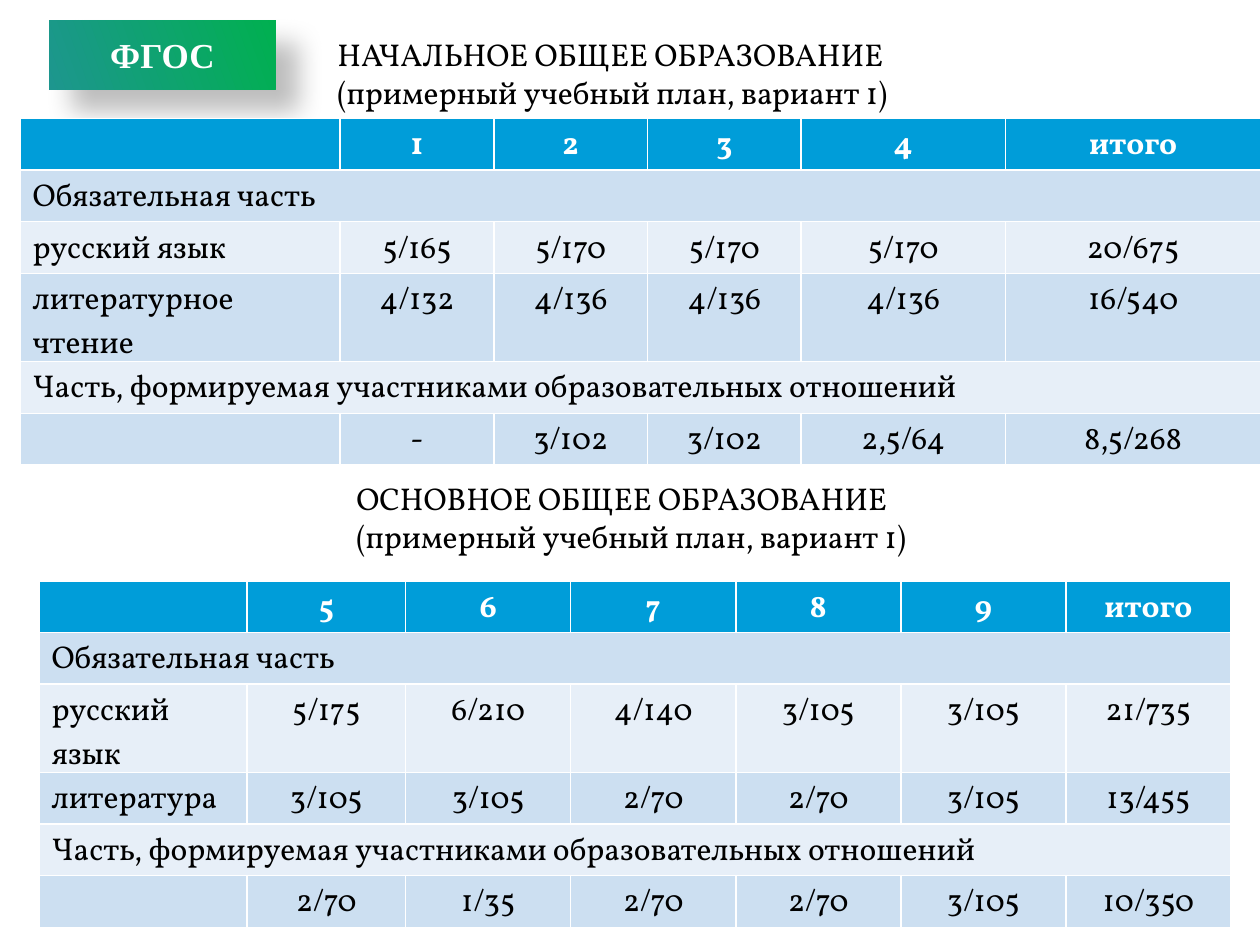
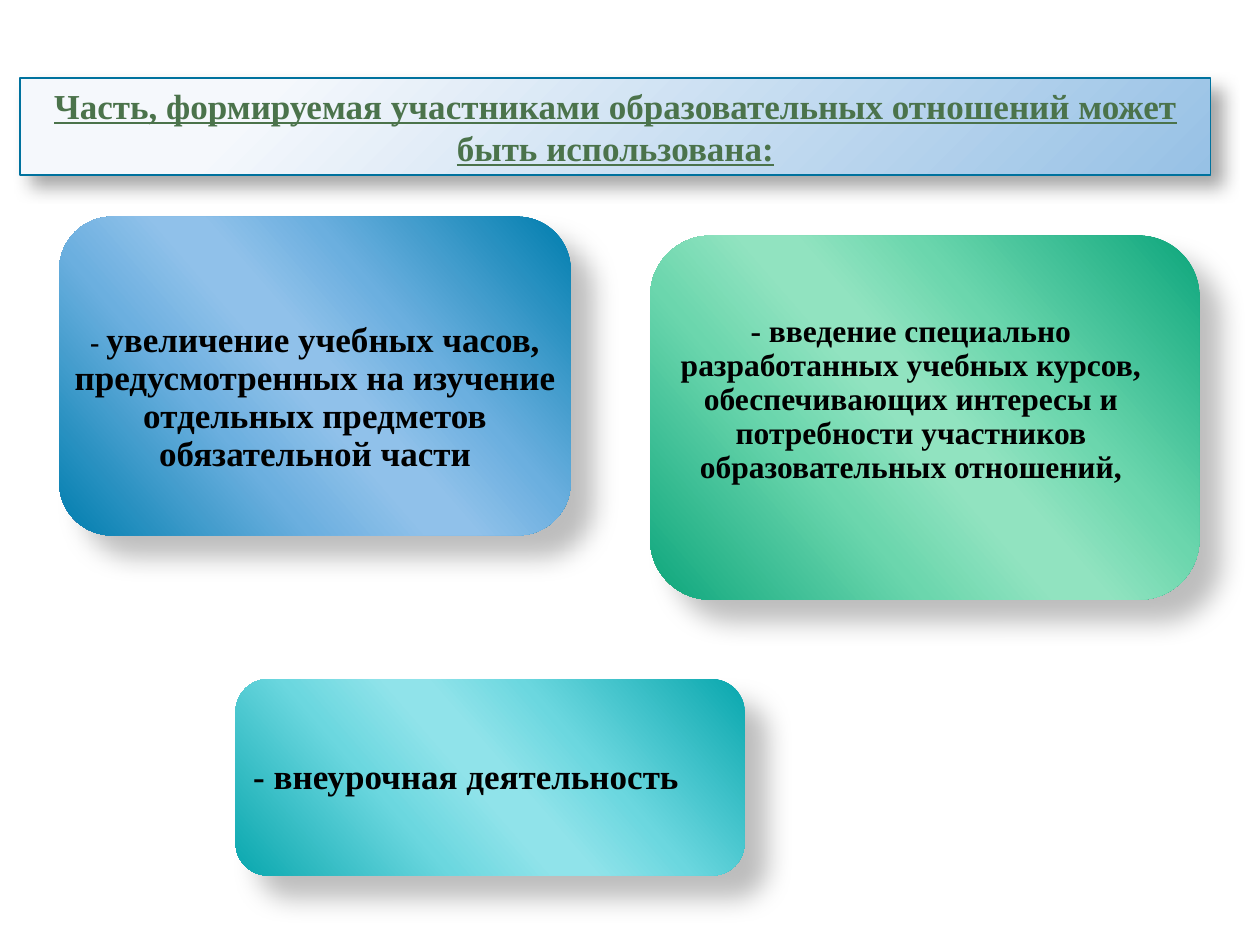
import lxml.etree
import pptx
import pptx.dml.color
import pptx.enum.shapes
import pptx.enum.text
import pptx.oxml.ns
import pptx.util
from pptx.util import Inches

# Content: study plans
MANDATORY = "Обязательная часть"
OPTIONAL = "Часть, формируемая участниками образовательных отношений"
VARIANT = "(примерный учебный план, вариант 1)"
BADGE = "ФГОС"

# A row with a single entry spans the whole table
PLANS = [
    {
        "title": ["ОСНОВНОЕ ОБЩЕЕ ОБРАЗОВАНИЕ", VARIANT],
        "title_at": (2.73, 3.75, 4.85, 0.71),
        "table_at": (0.31, 4.61),
        "cols": [1.65, 1.26] + [1.31] * 5,
        "rows": [
            ["", "5", "6", "7", "8", "9", "итого"],
            [MANDATORY],
            ["русский язык", "5/175", "6/210", "4/140", "3/105", "3/105", "21/735"],
            ["литература", "3/105", "3/105", "2/70", "2/70", "3/105", "13/455"],
            [OPTIONAL],
            ["", "2/70", "1/35", "2/70", "2/70", "3/105", "10/350"],
        ],
    },
    {
        "title": ["НАЧАЛЬНОЕ ОБЩЕЕ ОБРАЗОВАНИЕ", VARIANT],
        "title_at": (2.58, 0.23, 4.85, 0.71),
        "table_at": (0.16, 0.94),
        "cols": [2.54] + [1.22] * 3 + [1.62, 2.03],
        "rows": [
            ["", "1", "2", "3", "4", "итого"],
            [MANDATORY],
            ["русский язык", "5/165", "5/170", "5/170", "5/170", "20/675"],
            ["литературное чтение", "4/132", "4/136", "4/136", "4/136", "16/540"],
            [OPTIONAL],
            ["", "-", "3/102", "3/102", "2,5/64", "8,5/268"],
        ],
    },
]

# Content: uses of the optional part
USES_TITLE = OPTIONAL + " может быть использована:"
USES = [
    {
        "runs": [("- ", 16),
                 ("увеличение учебных часов, предусмотренных на изучение "
                  "отдельных предметов обязательной части", 20)],
        "card": (0.47, 1.72, 4.06, 2.53), "text": (0.39, 1.86, 4.22, 2.6),
        "shades": ("007EAE", "6BAFDF", "90C1EA"), "align": "CENTER", "inset": 0.07,
    },
    {
        "runs": [("- введение специально разработанных учебных курсов, "
                  "обеспечивающих интересы и потребности участников "
                  "образовательных отношений,", 18)],
        "card": (5.16, 1.87, 4.36, 2.89), "text": (5.08, 2, 4.3, 2.36),
        "shades": ("0DA67C", "6BD6AD", "91E3C0"), "align": "CENTER", "inset": 0.07,
    },
    {
        "runs": [("- внеурочная деятельность", 20)],
        "card": (1.87, 5.39, 4.04, 1.56), "text": (1.93, 5.47, 4.09, 1.41),
        "shades": ("09A7AE", "6BD7DF", "90E3EA"), "align": "LEFT", "inset": 0.08,
    },
]

# Shared style
COLORS = {
    "text": "000000", "white": "FFFFFF", "header": "009DD9",
    "band_dark": "CCDFF1", "band_light": "E7EFF8",
    "badge_start": "00B050", "badge_end": "1D968E",
    "title_text": "4B734B", "title_line": "00729E",
    "title_start": "F5F8FC", "title_end": "97C1E5",
}
PLAN_FONT, USES_FONT = "Vollkorn", "Times New Roman"
ROW_HEIGHT = 0.41
ALIGN = pptx.enum.text.PP_ALIGN
ANCHOR = pptx.enum.text.MSO_ANCHOR
SHAPE = pptx.enum.shapes.MSO_SHAPE


def rgb(name):
    return pptx.dml.color.RGBColor.from_string(COLORS[name])


def style(p, font, size, color="text", bold=False, align=ALIGN.LEFT):
    p.alignment = align
    p.font.name = font
    p.font.size = pptx.util.Pt(size)
    p.font.bold = bold
    p.font.color.rgb = rgb(color)


def add_xml(parent, markup):
    namespace = pptx.oxml.ns.nsdecls("a")
    parent.append(lxml.etree.fromstring(markup.replace(">", f" {namespace}>", 1),
                                        pptx.oxml.oxml_parser))


def add_panel(s, at, kind, stops, direction, line=None, shadow=(26, 15, 18)):
    """Shape with a gradient fill and a soft shadow to the lower right."""
    sp = s.shapes.add_shape(kind, *map(Inches, at))
    sp_pr = sp.fill._xPr
    stop_xml = "".join(f'<a:gs pos="{pos * 1000}"><a:srgbClr val="{color}"/></a:gs>'
                       for pos, color in stops)
    add_xml(sp_pr, f'<a:gradFill rotWithShape="1"><a:gsLst>{stop_xml}</a:gsLst>'
                   f'{direction}</a:gradFill>')
    if line:
        sp.line.color.rgb = rgb(line)
        sp.line.width = pptx.util.Pt(0.75)
    else:
        sp.line.fill.background()
    alpha, blur, distance = shadow
    add_xml(sp_pr, f'<a:effectLst><a:outerShdw blurRad="{pptx.util.Pt(blur)}" '
                   f'dist="{pptx.util.Pt(distance)}" dir="2700000" algn="tl">'
                   f'<a:srgbClr val="{COLORS["text"]}"><a:alpha val="{alpha * 1000}"/>'
                   f'</a:srgbClr></a:outerShdw></a:effectLst>')
    sp.text_frame.word_wrap = True
    return sp


def linear(degrees):
    return f'<a:lin ang="{degrees * 60000}" scaled="0"/>'


def add_text(s, at):
    tf = s.shapes.add_textbox(*map(Inches, at)).text_frame
    tf.word_wrap = True
    return tf


def add_plan(s, plan):
    tf = add_text(s, plan["title_at"])
    tf.text = "\n".join(plan["title"])
    for p in tf.paragraphs:
        style(p, PLAN_FONT, 18)

    rows, cols = plan["rows"], plan["cols"]
    table = s.shapes.add_table(
        len(rows), len(cols), *map(Inches, plan["table_at"]),
        Inches(sum(cols)), Inches(ROW_HEIGHT * len(rows))).table
    for column, width in zip(table.columns, cols):
        column.width = Inches(width)
    for i, row in enumerate(rows):
        table.rows[i].height = Inches(ROW_HEIGHT)
        band = "header" if i == 0 else "band_dark" if i % 2 else "band_light"
        for j in range(len(cols)):
            cell = table.cell(i, j)
            cell.fill.solid()
            cell.fill.fore_color.rgb = rgb(band)
            cell.text = row[j] if j < len(row) else ""
            style(cell.text_frame.paragraphs[0], PLAN_FONT, 18,
                  "text" if i else "white", i == 0, ALIGN.CENTER if j else ALIGN.LEFT)
        if len(row) == 1:
            table.cell(i, 0).merge(table.cell(i, len(cols) - 1))


def add_use(s, use):
    edge, middle, center = use["shades"]
    stops = [(0, edge), (33, middle), (47, center), (53, center), (68, middle), (100, edge)]
    add_panel(s, use["card"], SHAPE.ROUNDED_RECTANGLE, stops, linear(139))
    tf = add_text(s, use["text"])
    tf.vertical_anchor = ANCHOR.MIDDLE
    tf.margin_left = tf.margin_right = Inches(use["inset"])
    tf.margin_top = tf.margin_bottom = Inches(use["inset"])
    p = tf.paragraphs[0]
    style(p, USES_FONT, use["runs"][-1][1], bold=True, align=ALIGN[use["align"]])
    p.line_spacing = 0.9
    for text, size in use["runs"]:
        r = p.add_run()
        r.text = text
        r.font.size = pptx.util.Pt(size)


def main():
    prs = pptx.Presentation()
    prs.slide_width, prs.slide_height = Inches(10), Inches(7.5)
    blank = prs.slide_layouts[6]

    # Slide 1: two study plans and the badge
    s = prs.slides.add_slide(blank)
    badge = add_panel(s, (0.39, 0.16, 1.8, 0.55), SHAPE.RECTANGLE,
                      [(0, COLORS["badge_start"]), (100, COLORS["badge_end"])], linear(160))
    badge.text_frame.text = BADGE
    style(badge.text_frame.paragraphs[0], USES_FONT, 20, "white", True, ALIGN.CENTER)
    for plan in PLANS:
        add_plan(s, plan)

    # Slide 2: title band and three cards
    s = prs.slides.add_slide(blank)
    corner = ('<a:path path="circle"><a:fillToRect l="-15000" t="-15000" '
              'r="115000" b="115000"/></a:path>')
    title = add_panel(s, (0.16, 0.62, 9.45, 0.77), SHAPE.RECTANGLE,
                      [(20, COLORS["title_start"]), (100, COLORS["title_end"])],
                      corner, "title_line", (35, 10.2, 8))
    tf = title.text_frame
    tf.vertical_anchor = ANCHOR.TOP
    tf.text = USES_TITLE
    style(tf.paragraphs[0], USES_FONT, 20, "title_text", True, ALIGN.CENTER)
    tf.paragraphs[0].font.underline = True
    for use in USES:
        add_use(s, use)

    prs.save("out.pptx")


if __name__ == "__main__":
    main()
